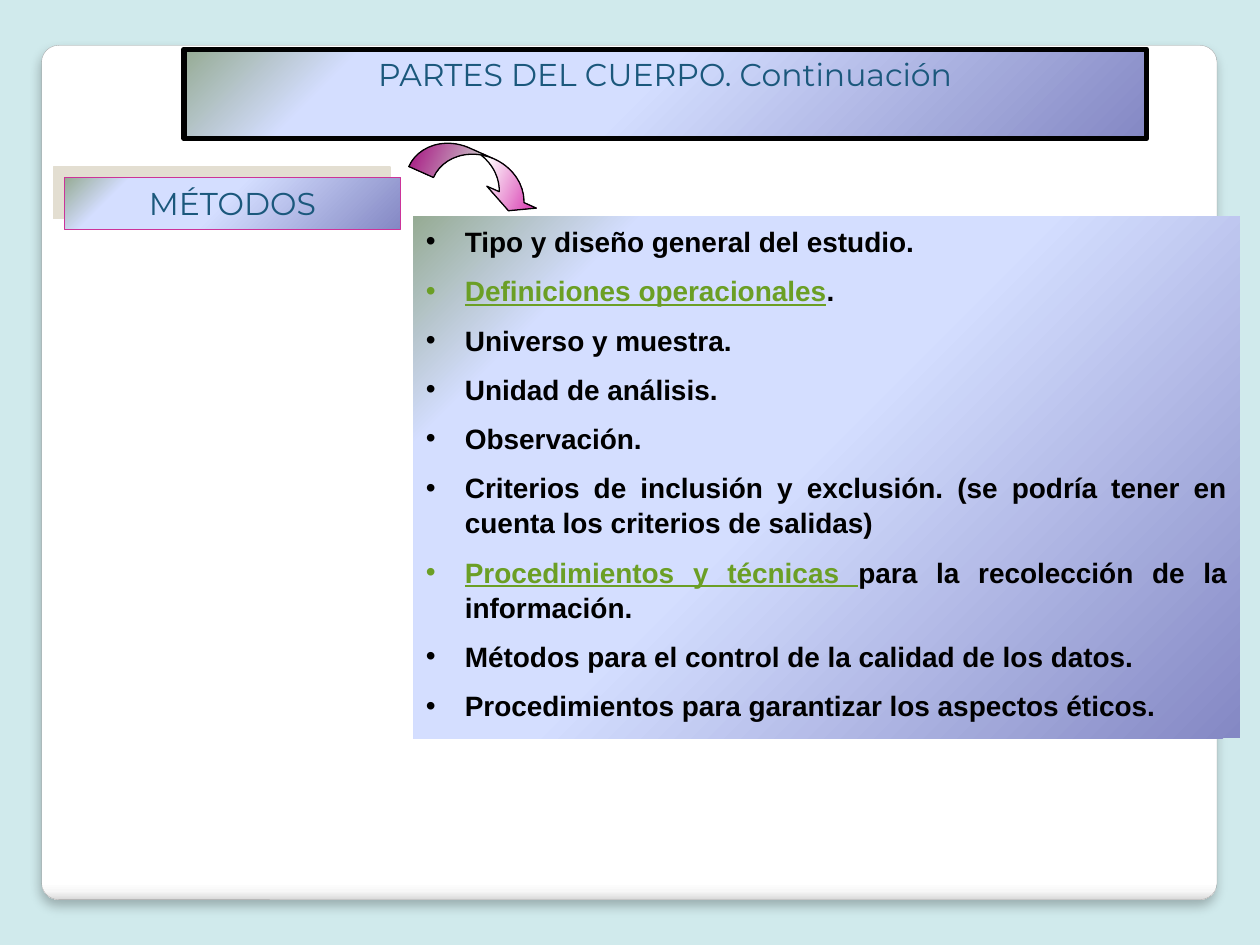
from lxml.etree import SubElement
from pptx import Presentation
from pptx.dml.color import RGBColor
from pptx.enum.shapes import MSO_SHAPE
from pptx.enum.text import MSO_ANCHOR, MSO_AUTO_SIZE, PP_ALIGN
from pptx.oxml.ns import qn
from pptx.util import Inches, Pt

WIDTH, HEIGHT = Inches(10), Inches(7.5)
BACKGROUND = RGBColor(0xD0, 0xEA, 0xEC)
WHITE = RGBColor(0xFF, 0xFF, 0xFF)
BLACK = RGBColor(0x00, 0x00, 0x00)
GRAY = RGBColor(0xA4, 0xA4, 0xA4)
PALE_GRAY = RGBColor(0xF7, 0xF7, 0xF7)
EDGE_GRAY = RGBColor(0xDA, 0xDA, 0xDA)
BEIGE = RGBColor(0xE3, 0xDE, 0xD1)
NAVY = RGBColor(0x1B, 0x58, 0x7C)
GREEN = RGBColor(0x6B, 0x9F, 0x25)
PINK = RGBColor(0xCC, 0x33, 0x99)
MAGENTA = RGBColor(0xCC, 0x00, 0x99)
PERIWINKLE = RGBColor(0x84, 0x88, 0xC4)
LAVENDER = RGBColor(0xD4, 0xDE, 0xFF)
SAGE = RGBColor(0x96, 0xAB, 0x94)

PANEL_STOPS = [(0, WHITE), (98, WHITE), (99, PALE_GRAY), (100, EDGE_GRAY)]
BOX_STOPS = [(0, PERIWINKLE), (53, LAVENDER), (83, LAVENDER), (100, SAGE)]
ARROW_STOPS = [(0, MAGENTA), (50, WHITE), (100, MAGENTA)]

TOPICS = [
    ("", "Tipo y diseño general del estudio."),
    ("Definiciones operacionales", "."),
    ("", "Universo y muestra."),
    ("", "Unidad de análisis."),
    ("", "Observación."),
    ("", "Criterios de inclusión y exclusión. (se podría tener en cuenta los criterios de salidas)"),
    ("Procedimientos y técnicas ", "para la recolección de la información."),
    ("", "Métodos para el control de la calidad de los datos."),
    ("", "Procedimientos para garantizar los aspectos éticos."),
]


def from_percent(left, top, width, height):
    return [int(share * length / 100) for share, length in
            zip((left, top, width, height), (WIDTH, HEIGHT, WIDTH, HEIGHT))]


def place(shape, box):
    shape.left, shape.top, shape.width, shape.height = box


def fill_gradient(shape, stops, angle):
    shape.fill.gradient()
    shape.fill.gradient_angle = 360 - angle
    stop_list = shape._element.spPr.find(".//" + qn("a:gsLst"))
    for stop in list(stop_list):
        stop_list.remove(stop)
    for position, color in stops:
        stop = SubElement(stop_list, qn("a:gs"), pos=str(position * 1000))
        SubElement(stop, qn("a:srgbClr"), val=str(color))


def outline(shape, color, width):
    shape.line.color.rgb = color
    shape.line.width = Pt(width)


def add_shadow(shape, color, opacity, blur, distance, angle):
    effects = shape._element.spPr.find(qn("a:effectLst"))
    shadow = SubElement(effects, qn("a:outerShdw"), blurRad=str(Pt(blur)),
                        dist=str(Pt(distance)), dir=str(angle * 60000),
                        algn="ctr", rotWithShape="0")
    tone = SubElement(shadow, qn("a:srgbClr"), val=str(color))
    SubElement(tone, qn("a:alpha"), val=str(opacity * 1000))


def add_gradient_shape(slide, kind, box, stops, angle):
    shape = slide.shapes.add_shape(kind, *box)
    shape.shadow.inherit = False
    fill_gradient(shape, stops, angle)
    return shape


def prepare_text(shape):
    frame = shape.text_frame
    frame.word_wrap = True
    frame.auto_size = MSO_AUTO_SIZE.NONE
    frame.vertical_anchor = MSO_ANCHOR.TOP
    return frame


def write_heading(shape, text):
    frame = prepare_text(shape)
    frame.text = text
    paragraph = frame.paragraphs[0]
    paragraph.alignment = PP_ALIGN.CENTER
    paragraph.font.name = "Montserrat"
    paragraph.font.size = Pt(18)
    paragraph.font.color.rgb = NAVY


def add_panel(slide, box):
    panel = add_gradient_shape(slide, MSO_SHAPE.ROUNDED_RECTANGLE, box, PANEL_STOPS, 90)
    panel.adjustments[0] = 0.02
    outline(panel, GRAY, 0.16)
    add_shadow(panel, BLACK, 25, 6, 4, 90)
    slide.shapes._spTree.insert(2, panel._element)


def build_title(slide, box):
    title = slide.shapes.title
    place(title, box)
    fill_gradient(title, BOX_STOPS, 225)
    outline(title, BLACK, 3)
    write_heading(title, "PARTES DEL CUERPO. Continuación")


def add_section_label(slide, box):
    label = add_gradient_shape(slide, MSO_SHAPE.RECTANGLE, box, BOX_STOPS, 225)
    outline(label, PINK, 0.75)
    add_shadow(label, BEIGE, 100, 0, 8.5, 225)
    write_heading(label, "MÉTODOS")


def add_curved_arrow(slide, box):
    arrow = add_gradient_shape(slide, MSO_SHAPE.CURVED_LEFT_ARROW, box, ARROW_STOPS, 90)
    for index, value in enumerate((0.65, 1.3, 0.33)):
        arrow.adjustments[index] = value
    arrow.rotation = 293.9
    outline(arrow, BLACK, 0.75)


def build_topics(slide, box):
    body = slide.placeholders[1]
    place(body, box)
    fill_gradient(body, BOX_STOPS, 225)
    frame = prepare_text(body)
    for index, (term, rest) in enumerate(TOPICS):
        paragraph = frame.add_paragraph() if index else frame.paragraphs[0]
        paragraph.alignment = PP_ALIGN.JUSTIFY
        paragraph.space_before = Pt(8)
        paragraph.line_spacing = 1.05
        paragraph.font.name = "Arial"
        paragraph.font.size = Pt(16)
        paragraph.font.bold = True
        properties = paragraph._p.get_or_add_pPr()
        properties.set("marL", str(Inches(0.31)))
        properties.set("indent", str(-Inches(0.31)))
        for text, color in ((term, GREEN), (rest, BLACK)):
            if text:
                run = paragraph.add_run()
                run.text = text
                run.font.color.rgb = color
                run.font.underline = color == GREEN


def main():
    presentation = Presentation()
    presentation.slide_width, presentation.slide_height = WIDTH, HEIGHT
    slide = presentation.slides.add_slide(presentation.slide_layouts[1])
    slide.background.fill.solid()
    slide.background.fill.fore_color.rgb = BACKGROUND
    add_panel(slide, from_percent(3.3, 4.8, 93.3, 90.4))
    build_title(slide, from_percent(14.6, 5.2, 76.4, 9.47))
    add_section_label(slide, from_percent(5.1, 18.8, 26.7, 5.47))
    add_curved_arrow(slide, from_percent(36.4, 11.33, 3.3, 14.4))
    build_topics(slide, from_percent(32.8, 22.93, 65.6, 55.2))
    presentation.save("out.pptx")


if __name__ == "__main__":
    main()
